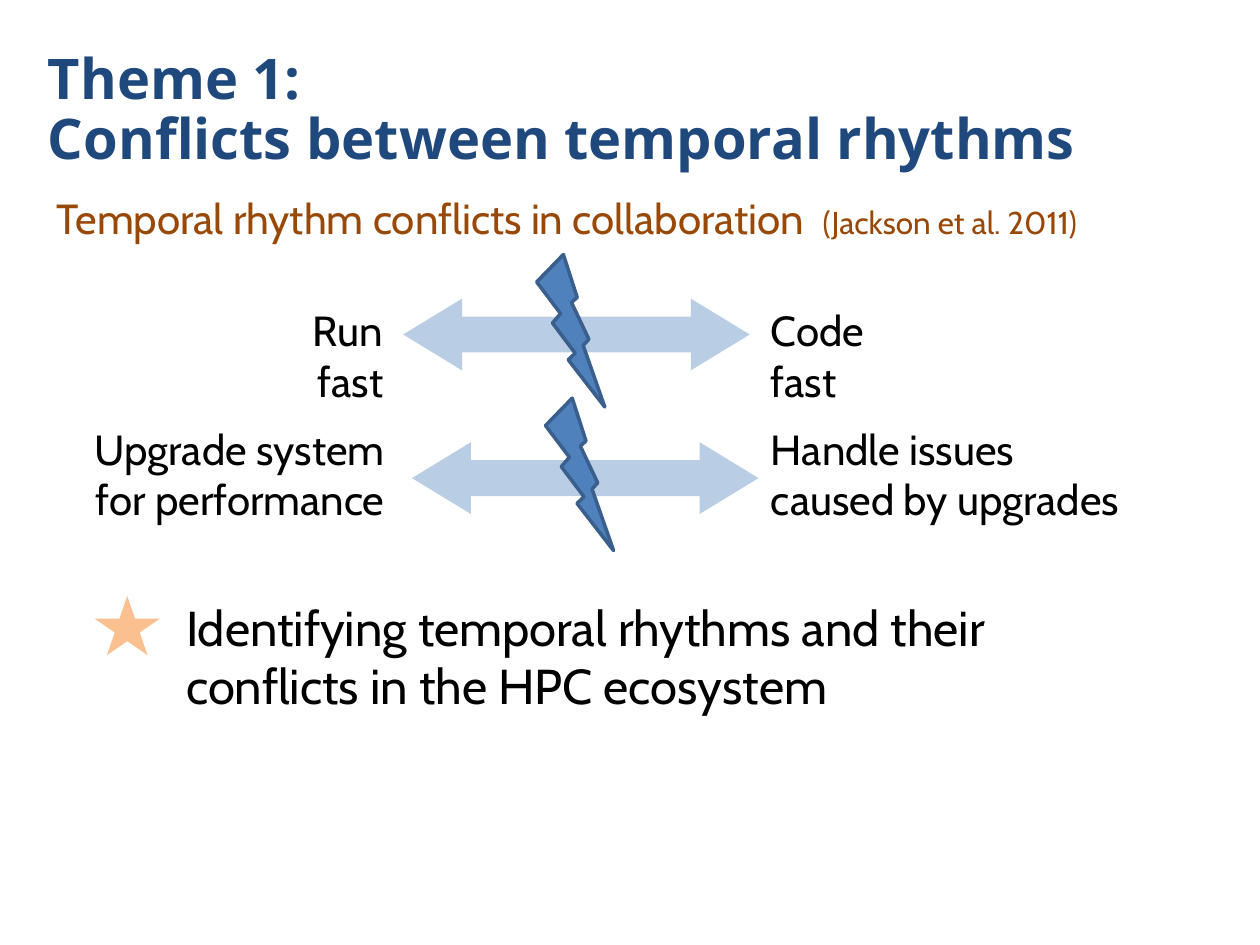
from pptx import Presentation
from pptx.dml.color import RGBColor
from pptx.enum import shapes, text
from pptx.util import Inches, Pt

THEME = {
    "title_font": "Open Sans", "body_font": "Cabin",
    "title": "1F497D", "subtitle": "984807", "body": "000000",
    "arrow": "B9CDE5", "bolt": "4F81BD", "bolt_line": "3A5F8C", "star": "FAC090",
    "title_size": 32, "body_size": 24, "cite_size": 18, "takeaway_size": 28,
}

TITLE = "Theme 1:\vConflicts between temporal rhythms"
SUBTITLE = "Temporal rhythm conflicts in collaboration  "
CITATION = "(Jackson et al. 2011)"
TAKEAWAY = "Identifying temporal rhythms and their conflicts in the HPC ecosystem"

# left label and its box, right label and its box, arrow position
CONFLICTS = [
    ("Run\vfast", (1.81, 2.37, 1.33, 0.5),
     "Code\vfast", (6.02, 2.37, 1.51, 0.5), (3.2, 2.37)),
    ("Upgrade system\vfor performance", (0.51, 3.31, 2.64, 0.91),
     "Handle issues\vcaused by upgrades", (6.02, 3.31, 3.01, 0.91), (3.27, 3.51)),
]
ARROW_SIZE = (2.75, 0.57)
BOLT_OFFSET = (1.06, -0.35)
BOLT_SIZE = (0.54, 1.21)


def color(name):
    return RGBColor.from_string(THEME[name])


def style(paragraph, font, size, color_name, align=text.PP_ALIGN.LEFT):
    paragraph.alignment = align
    paragraph.font.name = THEME[font]
    paragraph.font.size = Pt(THEME[size])
    paragraph.font.color.rgb = color(color_name)


def add_text(slide, box, words, size="body_size", color_name="body",
             align=text.PP_ALIGN.LEFT):
    frame = slide.shapes.add_textbox(*map(Inches, box)).text_frame
    frame.word_wrap = True
    paragraph = frame.paragraphs[0]
    paragraph.text = words
    style(paragraph, "body_font", size, color_name, align)
    return paragraph


def add_filled(slide, kind, box, fill):
    shape = slide.shapes.add_shape(kind, *map(Inches, box))
    shape.shadow.inherit = False
    shape.fill.solid()
    shape.fill.fore_color.rgb = color(fill)
    shape.line.fill.background()
    return shape


def add_title(slide):
    title = slide.shapes.title
    title.left, title.top, title.width, title.height = map(
        Inches, (0.28, 0.3, 9.22, 1.17))
    frame = title.text_frame
    frame.text = TITLE
    frame.auto_size = text.MSO_AUTO_SIZE.NONE
    frame.vertical_anchor = text.MSO_ANCHOR.MIDDLE
    paragraph = frame.paragraphs[0]
    style(paragraph, "title_font", "title_size", "title")
    paragraph.font.bold = True
    paragraph.line_spacing = 0.9


def add_conflict(slide, left_words, left_box, right_words, right_box, position):
    add_text(slide, right_box, right_words)
    add_text(slide, left_box, left_words, align=text.PP_ALIGN.RIGHT)
    arrow = add_filled(slide, shapes.MSO_SHAPE.LEFT_RIGHT_ARROW,
                       position + ARROW_SIZE, "arrow")
    arrow.adjustments[0] = 0.5
    arrow.adjustments[1] = 0.82
    bolt_position = tuple(p + d for p, d in zip(position, BOLT_OFFSET))
    bolt = add_filled(slide, shapes.MSO_SHAPE.LIGHTNING_BOLT,
                      bolt_position + BOLT_SIZE, "bolt")
    bolt.line.color.rgb = color("bolt_line")
    bolt.line.width = Pt(2)


def main():
    presentation = Presentation()
    presentation.slide_width, presentation.slide_height = Inches(10), Inches(7.5)
    slide = presentation.slides.add_slide(presentation.slide_layouts[5])
    add_title(slide)
    for conflict in CONFLICTS:
        add_conflict(slide, *conflict)
    subtitle = add_text(slide, (0.35, 1.48, 9.29, 0.5), SUBTITLE,
                        color_name="subtitle")
    citation = subtitle.add_run()
    citation.text = CITATION
    citation.font.size = Pt(THEME["cite_size"])
    add_text(slide, (1.38, 4.69, 7.97, 1.04), TAKEAWAY, "takeaway_size")
    add_filled(slide, shapes.MSO_SHAPE.STAR_5_POINT, (0.75, 4.73, 0.52, 0.47), "star")
    presentation.save("out.pptx")


if __name__ == "__main__":
    main()
